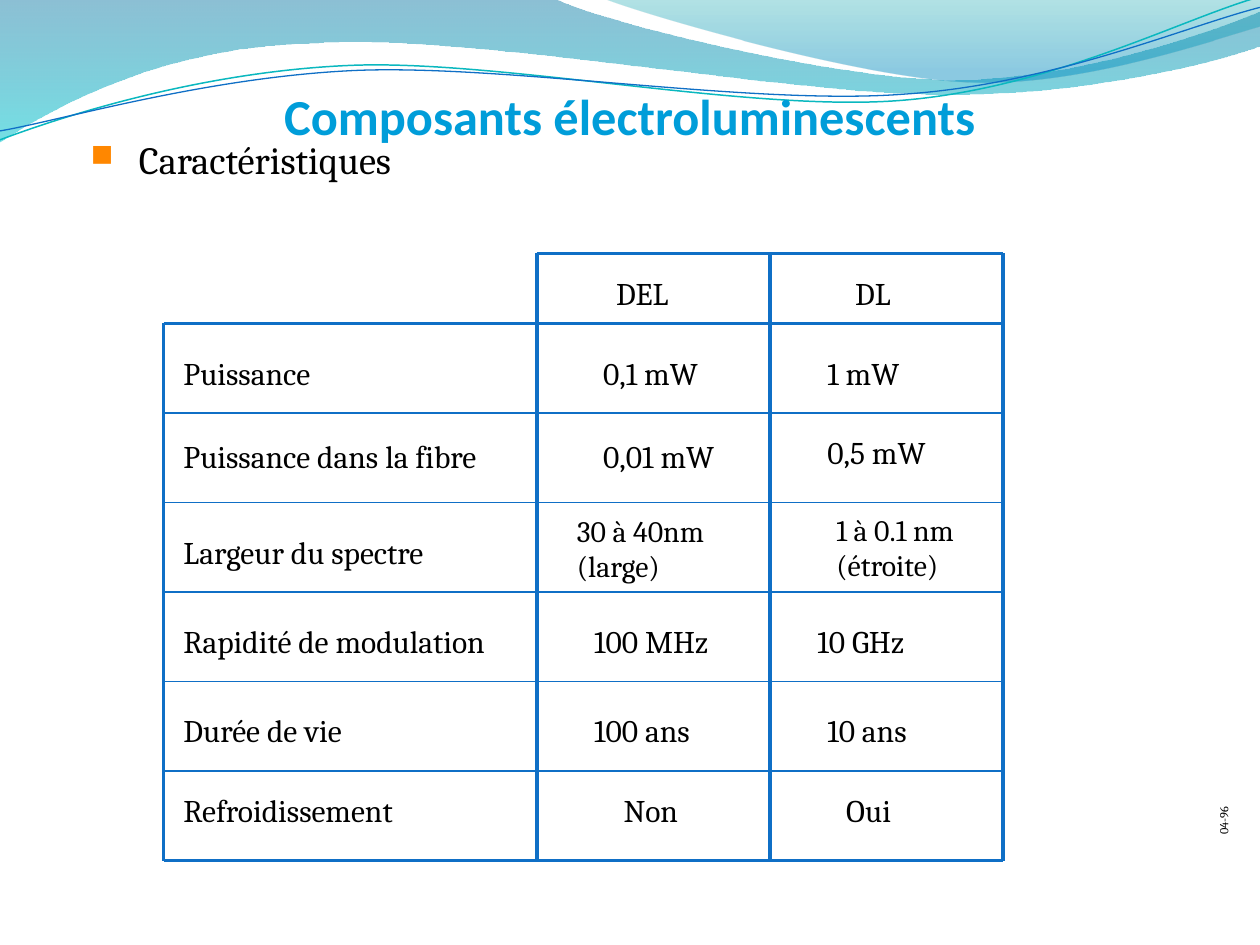
from dataclasses import dataclass

from lxml.etree import Element, SubElement
from pptx import Presentation
from pptx.dml.color import RGBColor
from pptx.enum.shapes import MSO_CONNECTOR, MSO_SHAPE
from pptx.enum.text import MSO_ANCHOR, PP_ALIGN
from pptx.oxml.ns import qn
from pptx.util import Cm, Pt


@dataclass(frozen=True)
class Theme:
    title: RGBColor = RGBColor.from_string("009DD9")
    text: RGBColor = RGBColor.from_string("000000")
    paper: RGBColor = RGBColor.from_string("FFFFFF")
    grid: RGBColor = RGBColor.from_string("0F6FC6")
    teal: RGBColor = RGBColor.from_string("0AB8BF")
    deep_blue: RGBColor = RGBColor.from_string("0074A1")
    cyan: RGBColor = RGBColor.from_string("00C6CF")
    sea: RGBColor = RGBColor.from_string("00A1A9")
    sky: RGBColor = RGBColor.from_string("008BBF")
    bullet: str = "FF8700"
    heading_font: str = "Calibri"
    body_font: str = "Cambria"
    title_size: float = 28.8
    topic_size: float = 22
    cell_size: float = 18
    pair_size: float = 17
    number_size: float = 7


theme = Theme()


def write(box, text, size=theme.cell_size, font=theme.body_font, color=theme.text,
          bold=False, align=PP_ALIGN.LEFT, anchor=MSO_ANCHOR.TOP, wrap=True,
          insets=(0.25, 0.12), spacing=None):
    frame = box.text_frame
    frame.word_wrap = wrap
    frame.vertical_anchor = anchor
    frame.margin_left, frame.margin_top = Cm(insets[0]), Cm(insets[1])
    frame.margin_right, frame.margin_bottom = Cm(0.23), Cm(0.1)
    for index, line in enumerate(text.split("\n")):
        para = frame.paragraphs[0] if index == 0 else frame.add_paragraph()
        para.alignment = align
        para.line_spacing = spacing
        span = para.add_run()
        span.text = line
        span.font.size = Pt(size)
        span.font.name = font
        span.font.bold = bold
        span.font.color.rgb = color
    return frame.paragraphs[0]


def draw_curve(start, segments, closed):
    points = [segment[i:i + 2] for segment in segments for i in range(0, len(segment), 2)]
    builder = page.shapes.build_freeform(Cm(start[0]), Cm(start[1]))
    builder.add_line_segments([(Cm(x), Cm(y)) for x, y in points], close=closed)
    shape = builder.convert_to_shape()
    shape.shadow.inherit = False
    steps = iter(list(shape.element.iter(qn("a:lnTo"))))
    for segment in segments:
        group = [next(steps) for _ in range(len(segment) // 2)]
        if len(group) == 3:
            curve = Element(qn("a:cubicBezTo"))
            group[0].addprevious(curve)
            for step in group:
                curve.append(step[0])
                step.getparent().remove(step)
    return shape


deck = Presentation()
deck.slide_width, deck.slide_height = Cm(25.4), Cm(19.05)
page = deck.slides.add_slide(deck.slide_layouts[6])

waves = [
    ((0, 0),
     [(11.18, -0.03), (12.09, 0.43, 16.87, 1.6, 19.25, 1.6),
      (21.67, 1.6, 24.33, 0.66, 25.4, 0.23), (25.43, 0.91),
      (24.97, 1.12, 22.1, 1.93, 18.95, 1.9), (15.8, 1.9, 9.7, 0.71, 6.53, 0.86),
      (3.28, 0.91, 1.17, 2.11, -0.03, 2.87)],
     [(0, theme.deep_blue, 45), (1, theme.cyan, 55)]),
    ((12.17, -0.03),
     [(12.93, 0.28, 17.32, 1.57, 19.53, 1.65),
      (21.74, 1.75, 24.41, 0.81, 25.4, 0.53), (25.4, 0)],
     [(0, theme.sea, 30), (0.8, theme.sky, 45)]),
]
for start, segments, stops in waves:
    wave = draw_curve(start, segments, True)
    wave.line.fill.background()
    wave.fill.gradient()
    wave.fill.gradient_angle = 270
    for stop, (position, color, opacity) in zip(wave.fill.gradient_stops, stops):
        stop.position = position
        stop.color.rgb = color
    for node, (_, _, opacity) in zip(wave.element.iter(qn("a:srgbClr")), stops):
        SubElement(node, qn("a:alpha")).set("val", str(opacity * 1000))

ribbons = [
    ((0, 2.82),
     [(1.22, 2.36, 4.01, 1.45, 7.04, 1.32), (10.03, 1.19, 15.06, 2.26, 18.11, 2.03),
      (21.16, 1.8, 23.83, 0.38, 25.35, -0.05)], theme.teal, 0.85),
    ((0, 2.64),
     [(1.19, 2.44, 4.17, 1.55, 7.19, 1.42), (10.24, 1.3, 15.16, 2.13, 18.21, 1.9),
      (21.23, 1.7, 23.9, 0.53, 25.4, 0.15)], theme.grid, 0.75),
]
for start, segments, color, weight in ribbons:
    ribbon = draw_curve(start, segments, False)
    ribbon.fill.background()
    ribbon.line.color.rgb = color
    ribbon.line.width = Pt(weight)

number = page.shapes.add_textbox(Cm(23.83), Cm(15.98), Cm(1.65), Cm(0.51))
number.rotation = 270
write(number, "04-96", size=theme.number_size, anchor=MSO_ANCHOR.BOTTOM, insets=(0.23, 0.1))

topic = page.shapes.add_textbox(Cm(0.64), Cm(1.7), Cm(23.77), Cm(15.65))
para = write(topic, "Caractéristiques", size=theme.topic_size, insets=(0.23, 1.81), spacing=0.8)
para.level = 1
properties = para._p.get_or_add_pPr()
properties.set("marL", str(Cm(1.93)))
properties.set("indent", str(-Cm(0.97)))
bullet_color = SubElement(properties, qn("a:buClr"))
SubElement(bullet_color, qn("a:srgbClr")).set("val", theme.bullet)
SubElement(properties, qn("a:buSzPct")).set("val", "80000")
SubElement(properties, qn("a:buChar")).set("char", "■")

left, first, second, right = 3.3, 10.82, 15.52, 20.22
header, top, bottom = 5.11, 6.52, 17.35
pitch = (bottom - top) / 6
rules = [(first, header, right, header, 2), (left, top, right, top, 2),
         (left, bottom, right, bottom, 2)]
rules += [(left, top + row * pitch, right, top + row * pitch, 1) for row in range(1, 6)]
rules += [(left, top, left, bottom, 2)]
rules += [(x, header, x, bottom, 2) for x in (first, second, right)]

grid = page.shapes.add_group_shape().shapes
for x1, y1, x2, y2, weight in rules:
    rule = grid.add_connector(MSO_CONNECTOR.STRAIGHT, Cm(x1), Cm(y1), Cm(x2), Cm(y2))
    rule.line.color.rgb = theme.grid
    rule.line.width = Pt(weight)
    SubElement(rule.element.spPr, qn("a:effectLst"))

cells = [
    ("DEL", 12.17, 5.41, 1.73), ("DL", 16.99, 5.41, 1.35),
    ("Puissance", 3.45, 7.01, 3.35), ("Puissance dans la fibre", 3.45, 8.69, 6.93),
    ("Largeur du spectre", 3.45, 10.62, 5.72), ("Rapidité de modulation", 3.45, 12.42, 7.04),
    ("Durée de vie", 3.45, 14.22, 4.01), ("Refroidissement", 3.45, 15.82, 4.98),
    ("Non", 12.32, 15.82, 1.88), ("Oui", 16.81, 15.82, 1.57),
    ("0,1 mW", 11.91, 7.01, 2.59), ("1 mW", 16.43, 7.01, 2.08),
    ("0,01 mW", 11.91, 8.69, 2.95), ("0,5 mW", 16.43, 8.61, 2.69),
    ("30 à 40nm\n(large)", 11.1, 10.21, 4.06), ("1 à 0.1 nm\n(étroite)", 16.61, 10.19, 3.23),
    ("100 MHz", 11.73, 12.42, 2.95), ("10 GHz", 16.23, 12.42, 2.57),
    ("100 ans", 11.73, 14.22, 2.49), ("10 ans", 16.43, 14.22, 2.13),
]
for text, x, y, width in cells:
    paired = "\n" in text
    box = grid.add_shape(MSO_SHAPE.RECTANGLE, Cm(x), Cm(y), Cm(width), Cm(1.7 if paired else 1.03))
    box.shadow.inherit = False
    box.fill.solid()
    box.fill.fore_color.rgb = theme.paper
    box.line.fill.background()
    write(box, text, size=theme.pair_size if paired else theme.cell_size, wrap=paired,
          insets=(0.53 if "large" in text else 0.25, 0.12))

title = page.shapes.add_textbox(Cm(1.88), Cm(1.6), Cm(21.64), Cm(3.2))
write(title, "Composants électroluminescents", size=theme.title_size, font=theme.heading_font,
      color=theme.title, bold=True, align=PP_ALIGN.CENTER, insets=(0.23, 0.12))

deck.save("out.pptx")
